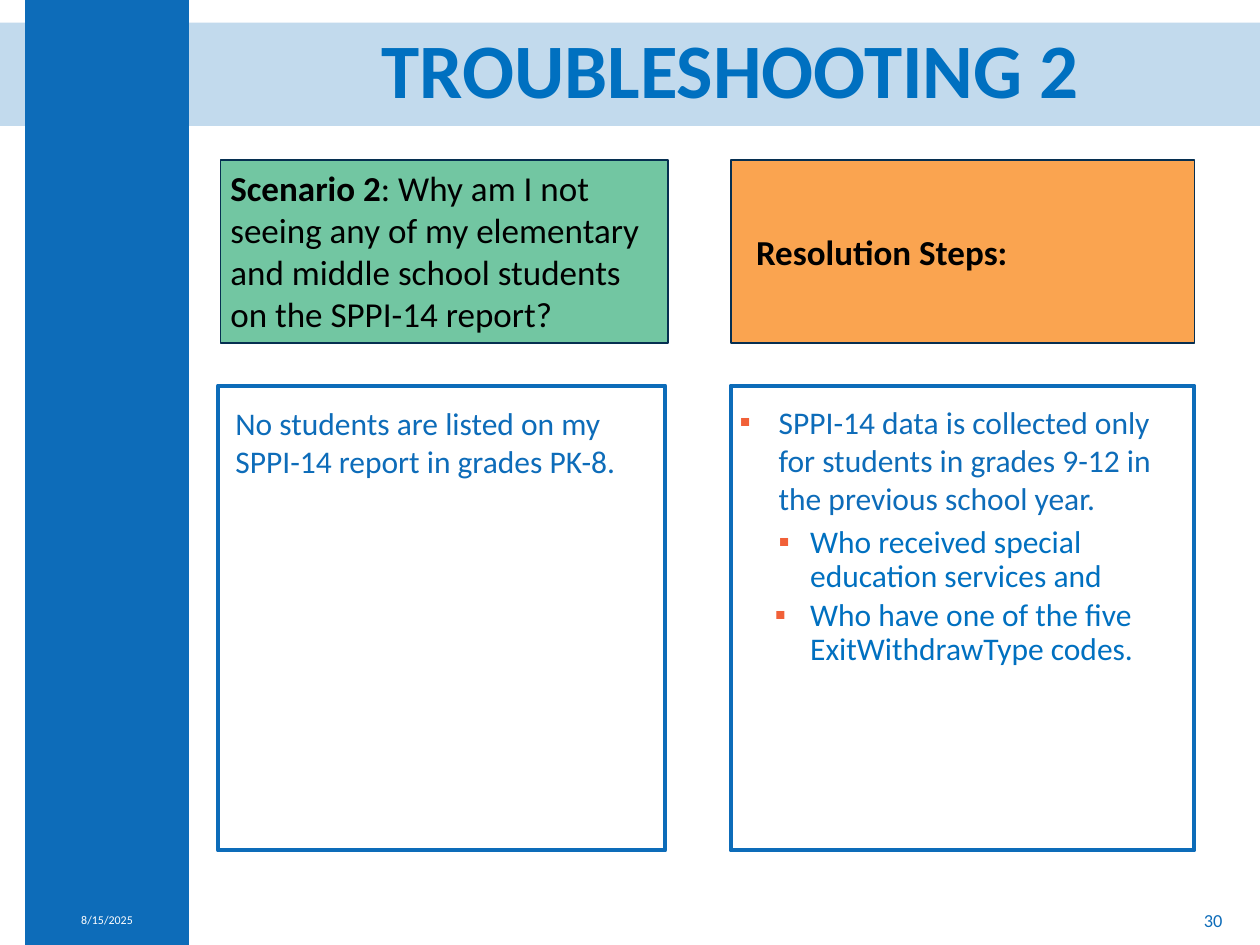
from lxml.etree import SubElement
from pptx import Presentation
from pptx.dml.color import RGBColor
from pptx.enum.shapes import MSO_SHAPE
from pptx.enum.text import MSO_ANCHOR, MSO_AUTO_SIZE, PP_ALIGN
from pptx.oxml.ns import qn
from pptx.util import Inches, Pt

FONT = "Calibri"
BLUE = RGBColor(0x0D, 0x6C, 0xB9)
BRIGHT_BLUE = RGBColor(0x00, 0x70, 0xC0)
NAVY = RGBColor(0x06, 0x2F, 0x51)
GREEN = RGBColor(0x72, 0xC6, 0xA2)
ORANGE = RGBColor(0xFA, 0xA4, 0x50)
BULLET_RED = RGBColor(0xF1, 0x60, 0x38)
BLACK = RGBColor(0, 0, 0)
WHITE = RGBColor(0xFF, 0xFF, 0xFF)

HEADER_TOP, HEADER_HEIGHT = 1.27, 1.45
PANEL_TOP, PANEL_HEIGHT = 3.06, 3.69
LEFT_COLUMN, LEFT_WIDTH = 1.73, 3.55
RIGHT_COLUMN, RIGHT_WIDTH = 5.8, 3.68


def add_box(slide, left, top, width, height, fill=None, line=None, line_width=1, alpha=None):
    """Add a rectangle with optional fill, outline and opacity in percent."""
    shape = slide.shapes.add_shape(
        MSO_SHAPE.RECTANGLE, Inches(left), Inches(top), Inches(width), Inches(height)
    )
    shape.shadow.inherit = False
    if fill is None:
        shape.fill.background()
    else:
        shape.fill.solid()
        shape.fill.fore_color.rgb = fill
    if alpha is not None:
        color = shape.element.spPr.find(qn("a:solidFill"))[0]
        SubElement(color, qn("a:alpha"), val=str(alpha * 1000))
    if line is None:
        shape.line.fill.background()
    else:
        shape.line.color.rgb = line
        shape.line.width = Pt(line_width)
    return shape


def add_text_box(slide, left, top, width, height, anchor=MSO_ANCHOR.TOP):
    """Add a wrapping text box and return its text frame."""
    shape = slide.shapes.add_textbox(Inches(left), Inches(top), Inches(width), Inches(height))
    frame = shape.text_frame
    frame.word_wrap = True
    frame.vertical_anchor = anchor
    return frame


def add_run(paragraph, text, size, color, bold=False):
    """Append one formatted run to a paragraph."""
    run = paragraph.add_run()
    run.text = text
    run.font.name = FONT
    run.font.size = Pt(size)
    run.font.bold = bold
    run.font.color.rgb = color


def set_bullet(paragraph, margin, hanging):
    """Give a paragraph a red square bullet with a hanging indent."""
    properties = paragraph._p.get_or_add_pPr()
    properties.set("marL", str(Inches(margin)))
    properties.set("indent", str(-Inches(hanging)))
    color = SubElement(properties, qn("a:buClr"))
    SubElement(color, qn("a:srgbClr"), val=str(BULLET_RED))
    SubElement(properties, qn("a:buFont"), typeface=FONT)
    SubElement(properties, qn("a:buChar"), char="▪")


def add_title(slide, text):
    """Place the title in front of the band and fill it."""
    title = slide.shapes.title
    slide.shapes.element.append(title.element)
    title.left, title.top = Inches(1.9), Inches(0.17)
    title.width, title.height = Inches(7.8), Inches(0.82)
    frame = title.text_frame
    frame.auto_size = MSO_AUTO_SIZE.NONE
    frame.vertical_anchor = MSO_ANCHOR.MIDDLE
    paragraph = frame.paragraphs[0]
    paragraph.alignment = PP_ALIGN.CENTER
    paragraph.line_spacing = 0.9
    add_run(paragraph, text, 44, BRIGHT_BLUE, True)


def add_footer(slide, left, width, text, size, color, alignment):
    """Add a one-line footer field."""
    frame = add_text_box(slide, left, 7.1, width, 0.4, MSO_ANCHOR.MIDDLE)
    paragraph = frame.paragraphs[0]
    paragraph.alignment = alignment
    add_run(paragraph, text, size, color)


def add_scenario(slide):
    """Add the scenario header and the panel with its finding."""
    add_box(slide, LEFT_COLUMN + 0.02, HEADER_TOP, LEFT_WIDTH, HEADER_HEIGHT, GREEN, NAVY)
    header = add_text_box(slide, LEFT_COLUMN, HEADER_TOP, 3.5, HEADER_HEIGHT).paragraphs[0]
    add_run(header, "Scenario 2", 20, BLACK, True)
    question = (
        ": Why am I not seeing any of my elementary and middle school students "
        "on the SPPI-14 report?"
    )
    add_run(header, question, 20, BLACK)
    add_box(slide, LEFT_COLUMN, PANEL_TOP, LEFT_WIDTH, PANEL_HEIGHT, line=BLUE, line_width=2.25)
    finding = add_text_box(slide, 1.77, PANEL_TOP + 0.1, 3.48, 0.71).paragraphs[0]
    add_run(finding, "No students are listed on my SPPI-14 report in grades PK-8.", 18, BLUE)


def add_resolution(slide):
    """Add the resolution header and the panel with its bulleted steps."""
    header = add_box(
        slide, RIGHT_COLUMN, HEADER_TOP, RIGHT_WIDTH, HEADER_HEIGHT, ORANGE, NAVY
    ).text_frame
    header.margin_left = Inches(0.2)
    header.vertical_anchor = MSO_ANCHOR.MIDDLE
    header.paragraphs[0].alignment = PP_ALIGN.LEFT
    add_run(header.paragraphs[0], "Resolution Steps:", 20, BLACK, True)

    add_box(slide, RIGHT_COLUMN, PANEL_TOP, RIGHT_WIDTH, PANEL_HEIGHT, line=BLUE, line_width=2.25)
    frame = add_text_box(slide, RIGHT_COLUMN, PANEL_TOP + 0.1, RIGHT_WIDTH, PANEL_HEIGHT)
    frame.margin_left = frame.margin_right = Inches(0.07)
    frame.margin_top = frame.margin_bottom = Inches(0.04)
    steps = [
        ("SPPI-14 data is collected only for students in grades 9-12 in "
         "the previous school year.", BLUE, 0, 0.31, 0.31, 1.0, 0),
        ("Who received special education services and", BRIGHT_BLUE, 0, 0.56, 0.25, 0.9, 5.6),
        ("Who have one of the five ExitWithdrawType codes.",
         BRIGHT_BLUE, 1, 0.56, 0.28, 0.9, 2.8),
    ]
    for index, (text, color, level, margin, hanging, spacing, before) in enumerate(steps):
        paragraph = frame.add_paragraph() if index else frame.paragraphs[0]
        set_bullet(paragraph, margin, hanging)
        paragraph.level = level
        paragraph.line_spacing = spacing
        paragraph.space_before = Pt(before)
        add_run(paragraph, text, 18, color)


def main():
    """Build and save the slide."""
    presentation = Presentation()
    presentation.slide_width = Inches(10)
    presentation.slide_height = Inches(7.5)
    slide = presentation.slides.add_slide(presentation.slide_layouts[5])
    add_box(slide, 0, 0.18, 10, 0.82, BLUE, alpha=25)
    add_box(slide, 0.2, 0, 1.3, 7.5, BLUE)
    add_title(slide, "TROUBLESHOOTING 2")
    add_footer(slide, 0.2, 1.3, "8/15/2025", 6.8, WHITE, PP_ALIGN.CENTER)
    add_footer(slide, 7.55, 2.25, "30", 10.5, BLUE, PP_ALIGN.RIGHT)
    add_scenario(slide)
    add_resolution(slide)
    presentation.save("out.pptx")


if __name__ == "__main__":
    main()
